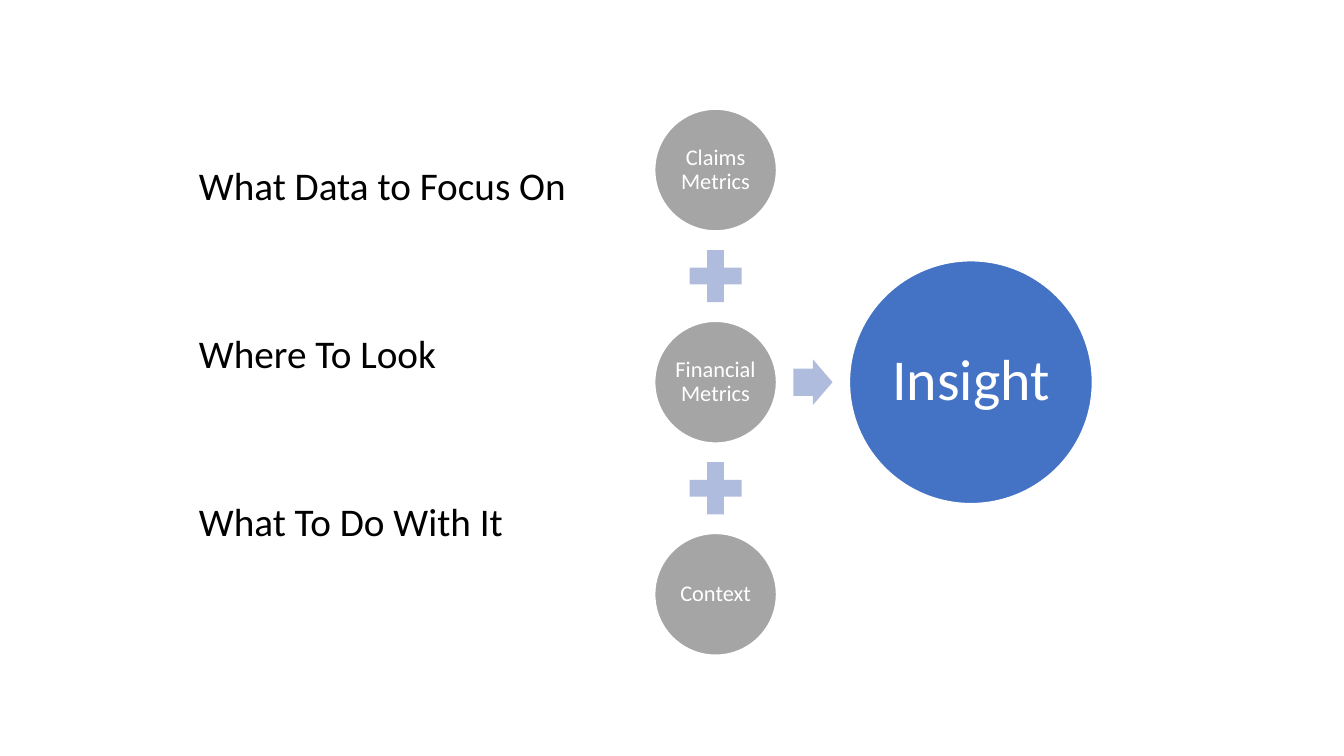
from dataclasses import dataclass

from pptx import Presentation
from pptx.dml.color import RGBColor
from pptx.enum.shapes import MSO_SHAPE as Preset
from pptx.enum.text import MSO_ANCHOR as Anchor, PP_ALIGN as Align
from pptx.util import Cm, Pt


@dataclass(frozen=True)
class Theme:
    font: str = "Calibri"
    text: str = "000000"
    light: str = "FFFFFF"
    source: str = "A5A5A5"
    operator: str = "B0BCDE"
    result: str = "4472C4"
    question_size: int = 21
    source_size: int = 12
    result_size: int = 31


THEME = Theme()


@dataclass(frozen=True)
class Box:
    """A rectangle in centimetres."""
    left: float
    top: float
    width: float
    height: float

    def lengths(self):
        return [Cm(value) for value in (self.left, self.top, self.width, self.height)]


def centred_box(center_x, center_y, width, height):
    return Box(center_x - width / 2, center_y - height / 2, width, height)


def write_text(frame, lines, *, size, color, align=Align.LEFT, anchor=Anchor.TOP,
               gap=0, inset=0):
    """Write one paragraph per line; gap is the space between them in points."""
    frame.word_wrap = True
    frame.vertical_anchor = anchor
    frame.margin_left = frame.margin_right = Cm(inset)
    frame.margin_top = frame.margin_bottom = Cm(inset / 2)
    for index, line in enumerate(lines):
        paragraph = frame.add_paragraph() if index else frame.paragraphs[0]
        paragraph.text = line
        paragraph.alignment = align
        paragraph.line_spacing = 0.9
        paragraph.space_before = Pt(gap if index else 0)
        paragraph.font.name = THEME.font
        paragraph.font.size = Pt(size)
        paragraph.font.color.rgb = RGBColor.from_string(color)


def add_filled_shape(slide, preset, box, color):
    shape = slide.shapes.add_shape(preset, *box.lengths())
    shape.shadow.inherit = False
    shape.fill.solid()
    shape.fill.fore_color.rgb = RGBColor.from_string(color)
    shape.line.fill.background()
    return shape


def add_circle(slide, box, label, color, size):
    circle = add_filled_shape(slide, Preset.OVAL, box, color)
    circle.line.color.rgb = RGBColor.from_string(THEME.light)
    circle.line.width = Pt(1)
    write_text(circle.text_frame, [label], size=size, color=THEME.light,
               align=Align.CENTER, anchor=Anchor.MIDDLE)


def add_questions(slide, box, questions):
    text_box = slide.shapes.add_textbox(*box.lengths())
    write_text(text_box.text_frame, questions, size=THEME.question_size,
               color=THEME.text, gap=67.5, inset=0.25)


def add_equation(slide, box, sources, result):
    """Stack the sources with plus signs between, and point to the result."""
    source_size, plus_size, result_size = 2.31, 1.34, 4.6
    step = (box.height - source_size) / (len(sources) - 1)
    center_x = box.left + source_size / 2
    first_y = box.top + source_size / 2
    middle_y = box.top + box.height / 2

    for index, label in enumerate(sources):
        center_y = first_y + index * step
        if index:
            plus = centred_box(center_x, center_y - step / 2, plus_size, plus_size)
            add_filled_shape(slide, Preset.MATH_PLUS, plus, THEME.operator)
        circle = centred_box(center_x, center_y, source_size, source_size)
        add_circle(slide, circle, label, THEME.source, THEME.source_size)

    result_x = box.left + box.width - result_size / 2
    gap_x = (box.left + source_size + result_x - result_size / 2) / 2
    arrow = add_filled_shape(slide, Preset.RIGHT_ARROW,
                             centred_box(gap_x, middle_y, 0.74, 0.86), THEME.operator)
    arrow.adjustments[0] = 0.6
    add_circle(slide, centred_box(result_x, middle_y, result_size, result_size),
               result, THEME.result, THEME.result_size)


def main():
    presentation = Presentation()
    presentation.slide_width = Cm(25.4)
    presentation.slide_height = Cm(14.29)
    slide = presentation.slides.add_slide(presentation.slide_layouts[6])
    add_questions(slide, Box(3.51, 3.02, 8.41, 9.42),
                  ["What Data to Focus On", "Where To Look", "What To Do With It"])
    add_equation(slide, Box(12.37, 2.06, 8.28, 10.33),
                 ["Claims Metrics", "Financial Metrics", "Context"], "Insight")
    presentation.save("out.pptx")


if __name__ == "__main__":
    main()
